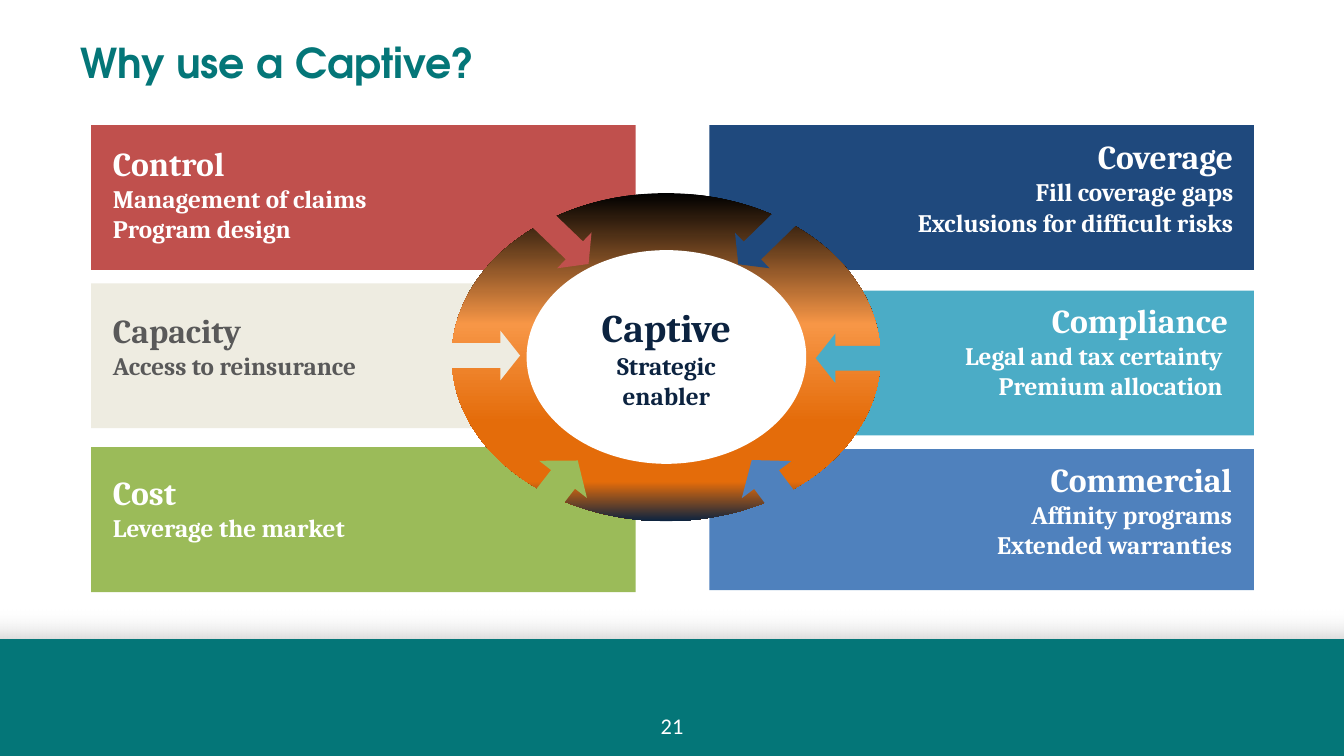
from dataclasses import dataclass

from lxml import etree
from pptx import Presentation
from pptx import util as u
from pptx.dml.color import RGBColor
from pptx.enum import shapes, text
from pptx.oxml.ns import qn

Pt = u.Pt
LEFT, CENTER, RIGHT = text.PP_ALIGN.LEFT, text.PP_ALIGN.CENTER, text.PP_ALIGN.RIGHT
TOP, MIDDLE, BOTTOM = (text.MSO_ANCHOR.TOP, text.MSO_ANCHOR.MIDDLE,
                       text.MSO_ANCHOR.BOTTOM)


@dataclass(frozen=True)
class Theme:
    teal: str = "047678"
    white: str = "FFFFFF"
    navy: str = "0C2340"
    gray: str = "595959"
    red: str = "C0504D"
    cream: str = "EEECE1"
    green: str = "9BBB59"
    dark_blue: str = "1F497D"
    aqua: str = "4BACC6"
    blue: str = "4F81BD"
    title_font: str = "TeX Gyre Adventor"
    body_font: str = "Cambria"
    number_font: str = "Calibri"
    title_size: float = 22
    hub_size: float = 21
    heading_size: float = 18
    detail_size: float = 13.5
    number_size: float = 12
    # Gradient stops: position in percent, colour, opacity in percent
    shade: tuple = ((0, "D9D9D9", 100), (100, "FFFFFF", 0))
    ring: tuple = ((0, "000000", 100), (40, "F79646", 100), (70, "E46C0A", 100),
                   (88, "E46C0A", 100), (100, "0C2340", 100))


@dataclass
class Card:
    lines: tuple
    color: str
    box: tuple
    label_box: tuple
    align: object
    arrow_box: tuple
    angle: float
    text_color: str = Theme.white


class SlideBuilder:
    def __init__(self, slide, theme):
        self.slide = slide
        self.theme = theme

    def shape(self, kind, box, color=None, line=None):
        shape = self.slide.shapes.add_shape(kind, *map(Pt, box))
        shape.shadow.inherit = False
        if color:
            shape.fill.solid()
            shape.fill.fore_color.rgb = RGBColor.from_string(color)
        if line:
            shape.line.color.rgb = RGBColor.from_string(line)
            shape.line.width = Pt(0.75)
        else:
            shape.line.fill.background()
        return shape

    def gradient(self, kind, box, stops, angle):
        """Add a shape with a linear gradient; the angle runs clockwise."""
        shape = self.shape(kind, box)
        shape.fill.gradient()
        fill = shape._element.spPr.find(qn("a:gradFill"))
        stop_list = fill.find(qn("a:gsLst"))
        for stop in list(stop_list):
            stop_list.remove(stop)
        for position, color, opacity in stops:
            stop = etree.SubElement(stop_list, qn("a:gs"), pos=str(position * 1000))
            rgb = etree.SubElement(stop, qn("a:srgbClr"), val=color)
            if opacity < 100:
                etree.SubElement(rgb, qn("a:alpha"), val=str(opacity * 1000))
        direction = fill.find(qn("a:lin"))
        direction.set("ang", str(angle * 60000))
        direction.set("scaled", "0")
        return shape

    def arrow(self, box, color, angle):
        arrow = self.shape(shapes.MSO_SHAPE.RIGHT_ARROW, box, color)
        arrow.adjustments[0], arrow.adjustments[1] = 0.5, 0.396
        arrow.rotation = angle

    def add_lines(self, shape, lines, sizes, color, font, align=LEFT, bold=True,
                  anchor=TOP, insets=(7.2, 3.6, 7.2, 3.6)):
        """Fill a shape with paragraphs; the last size serves all further lines."""
        frame = shape.text_frame
        frame_format = {"word_wrap": True, "vertical_anchor": anchor}
        for side, inset in zip(("left", "top", "right", "bottom"), insets):
            frame_format[f"margin_{side}"] = Pt(inset)
        for name, value in frame_format.items():
            setattr(frame, name, value)
        for index, line in enumerate(lines):
            paragraph = frame.paragraphs[0] if index == 0 else frame.add_paragraph()
            paragraph.alignment = align
            run = paragraph.add_run()
            run.text = line
            size = sizes[min(index, len(sizes) - 1)]
            font_format = {"name": font, "size": Pt(size), "bold": bold}
            for name, value in font_format.items():
                setattr(run.font, name, value)
            run.font.color.rgb = RGBColor.from_string(color)

    def text(self, box, *args, **kwargs):
        self.add_lines(self.slide.shapes.add_textbox(*map(Pt, box)), *args, **kwargs)

    def card_label(self, card):
        theme = self.theme
        insets = (6, 6, 0, 4.5) if card.align == LEFT else (0, 6, 6, 4.5)
        self.text(card.label_box, card.lines, (theme.heading_size, theme.detail_size),
                  card.text_color, theme.body_font, card.align, insets=insets)


def main():
    presentation = Presentation()
    presentation.slide_width, presentation.slide_height = Pt(720), Pt(405)
    theme = Theme()
    slide = presentation.slides.add_slide(presentation.slide_layouts[6])
    builder = SlideBuilder(slide, theme)
    rectangle, oval = shapes.MSO_SHAPE.RECTANGLE, shapes.MSO_SHAPE.OVAL

    builder.gradient(rectangle, (0, 326.7, 720, 16.3), theme.shade, 270)
    builder.shape(rectangle, (0, 342.7, 720, 62.3), theme.teal, theme.teal)
    builder.text((276, 378, 168, 21.6), ["21"], [theme.number_size], theme.white,
                 theme.number_font, CENTER, bold=False, anchor=BOTTOM)
    builder.text((36, 16.6, 648, 67.7), ["Why use a Captive?"], [theme.title_size],
                 theme.teal, theme.title_font)

    left, right, width, height = 48.8, 380, 291.8, 77.6
    label_left = 54.5
    cards = [
        Card(("Control", "Management of claims", "Program design"), theme.red,
             (left, 67, width, height), (label_left, 70.6, 194.4, 48.2), LEFT,
             (270.7, 110.2, 51.8, 26.6), 43.8),
        Card(("Capacity", "Access to reinsurance"), theme.cream,
             (left, 151.8, width, height), (label_left, 160, 198, 48.2), LEFT,
             (226.8, 177.2, 51.8, 26.6), 0, theme.gray),
        Card(("Cost", "Leverage the market"), theme.green,
             (left, 239.6, width, height), (label_left, 247, 207.4, 64.8), LEFT,
             (275.8, 247, 41.8, 32.4), 307.9),
        Card(("Coverage", "Fill coverage gaps", "Exclusions for difficult risks"),
             theme.dark_blue, (right, 67, width, height),
             (431.3, 67, 235.4, 56.2), RIGHT, (388.1, 110.2, 51.8, 26.6), 135.7),
        Card(("Compliance", "Legal and tax certainty ", "Premium allocation "),
             theme.aqua, (right, 155.7, width, height),
             (463, 154.8, 200.9, 74.9), RIGHT, (437, 178.6, 51.8, 26.6), 180),
        Card(("Commercial", "Affinity programs", "Extended warranties"),
             theme.blue, (right, 240.6, width, 75.6),
             (465.1, 239.8, 200.9, 48.2), RIGHT, (396, 243.4, 33.8, 33.1), 233.1),
    ]
    for card in cards:
        builder.shape(rectangle, card.box, card.color)
        builder.card_label(card)

    builder.gradient(oval, (242, 103.5, 229.7, 175.7), theme.ring, 90)
    hub = builder.shape(oval, (282.1, 134, 149.8, 114.5), theme.white)
    builder.add_lines(hub, ("Captive", "Strategic enabler"),
                      (theme.hub_size, theme.detail_size), theme.navy,
                      theme.body_font, CENTER, anchor=MIDDLE,
                      insets=(4.3, 2.2, 4.3, 2.2))
    for card in cards:
        builder.arrow(card.arrow_box, card.color, card.angle)

    presentation.save("out.pptx")


if __name__ == "__main__":
    main()
